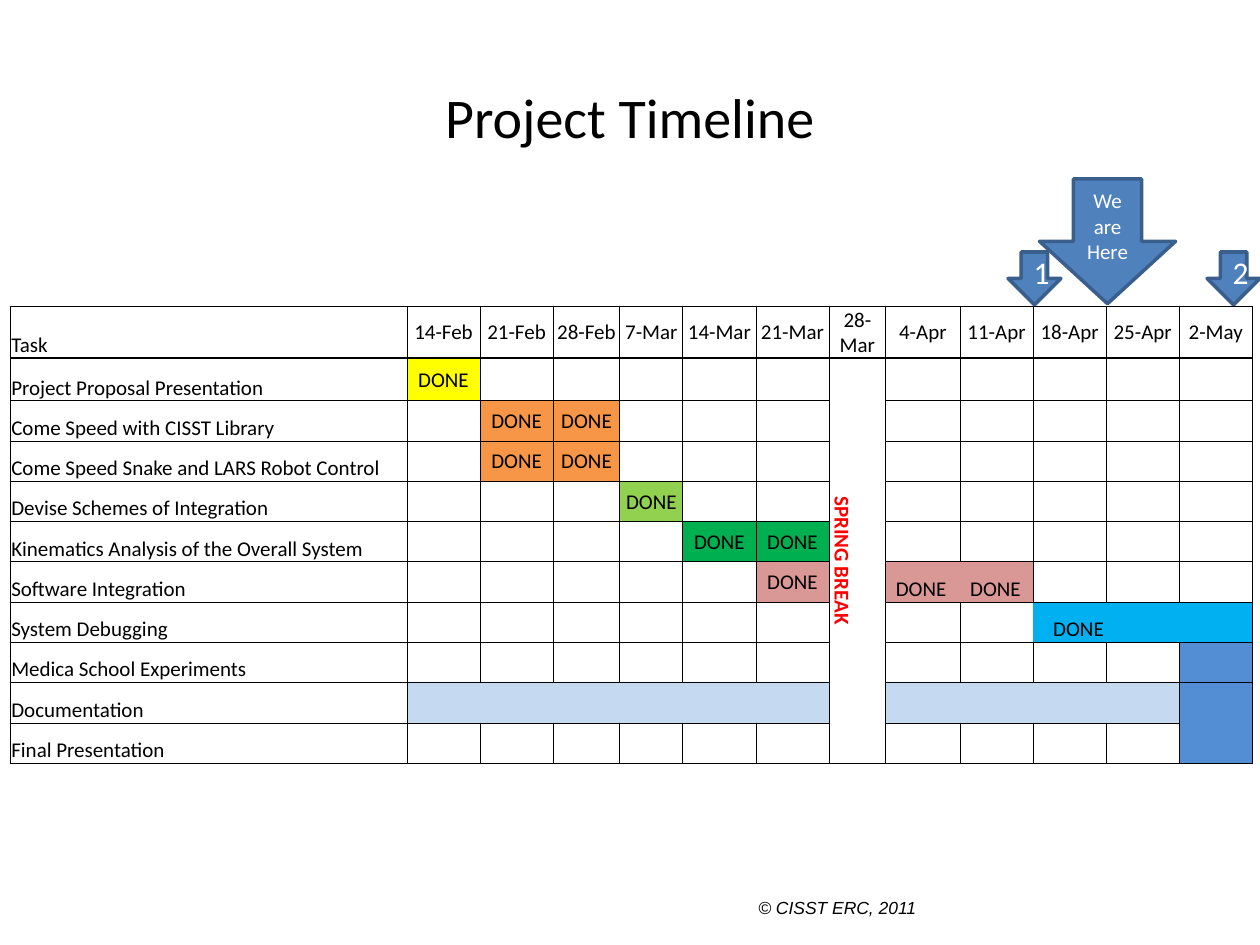
from typing import NamedTuple

from lxml import etree
from pptx import Presentation
from pptx.dml.color import RGBColor
from pptx.enum.shapes import MSO_SHAPE
from pptx.enum.text import MSO_ANCHOR, PP_ALIGN
from pptx.oxml.ns import qn
from pptx.util import Inches, Pt

DOWN_ARROW = MSO_SHAPE.DOWN_ARROW
LEFT, CENTER = PP_ALIGN.LEFT, PP_ALIGN.CENTER
MIDDLE, BOTTOM, TOP = MSO_ANCHOR.MIDDLE, MSO_ANCHOR.BOTTOM, MSO_ANCHOR.TOP

COLORS = {
    "text": "000000", "white": "FFFFFF", "break": "FF0000",
    "arrow": "4F81BD", "arrow_line": "3A5F8C",
    "proposal": "FFFF00", "learning": "F79646", "schemes": "92D050",
    "kinematics": "00B050", "software": "D99795", "debugging": "00B0F0",
    "documentation": "C5D9F1", "final": "538ED5",
}


class Label(NamedTuple):
    text: str
    left: float
    top: float
    width: float
    height: float
    font: str
    size: int
    align: PP_ALIGN
    anchor: MSO_ANCHOR
    italic: bool = False


class Arrow(NamedTuple):
    text: str
    left: float
    top: float
    width: float
    height: float
    size: int


class Bar(NamedTuple):
    """A coloured stretch of the chart, in table rows and columns."""
    row: int
    first: int
    last: int
    color: str
    text: str = ""
    merge_rows: int = 1
    merged: bool = False
    indent: float = 0  # above 0, the text stands bottom left at this inset


LABELS = [
    Label("© CISST ERC, 2011", 5.92, 7.07, 1.5, 0.27, "Arial", 10, LEFT, TOP, True),
    Label("Project Timeline", 0.5, 0.3, 9, 1.25, "Calibri", 32, CENTER, MIDDLE),
]
ARROWS = [
    Arrow("1", 8, 2, 0.42, 0.42, 18),
    Arrow("We are Here", 8.25, 1.42, 1.08, 0.99, 12),
    Arrow("2", 9.58, 2, 0.42, 0.42, 18),
]
WEEKS = ["14-Feb", "21-Feb", "28-Feb", "7-Mar", "14-Mar", "21-Mar",
         "28-Mar", "4-Apr", "11-Apr", "18-Apr", "25-Apr", "2-May"]
TASKS = ["Project Proposal Presentation", "Come Speed with CISST Library",
         "Come Speed Snake and LARS Robot Control",
         "Devise Schemes of Integration",
         "Kinematics Analysis of the Overall System", "Software Integration",
         "System Debugging", "Medica School Experiments", "Documentation",
         "Final Presentation"]
COL_WIDTHS = [3.15, 0.58, 0.58, 0.53, 0.5, 0.58, 0.58, 0.45, 0.59] + [0.58] * 4
ROW_HEIGHTS = [0.41, 0.34] + [0.32] * 9
BREAK_COL = 7
DEBUG_ROW, DEBUG_FIRST = 7, 10
SECOND_DONE = 0.59  # tab stop of the second word in a two-week bar
BARS = [
    Bar(1, 1, 1, "proposal", "DONE"),
    Bar(2, 2, 3, "learning", "DONE"),
    Bar(3, 2, 3, "learning", "DONE"),
    Bar(4, 4, 4, "schemes", "DONE"),
    Bar(5, 5, 6, "kinematics", "DONE"),
    Bar(6, 6, 6, "software", "DONE"),
    Bar(6, 8, 9, "software", "DONE\tDONE", merged=True, indent=0.08),
    Bar(DEBUG_ROW, DEBUG_FIRST, 10, "debugging", "DONE", indent=0.16),
    Bar(DEBUG_ROW, 11, 12, "debugging"),
    Bar(8, 12, 12, "final"),
    Bar(9, 1, 6, "documentation", merged=True),
    Bar(9, 8, 11, "documentation", merged=True),
    Bar(9, 12, 12, "final", merge_rows=2, merged=True),
]


def rgb(name: str) -> RGBColor:
    return RGBColor.from_string(COLORS[name])


def write(tf, text: str, size: int, align=LEFT, color="text", font="Calibri",
          bold=False, italic=False) -> None:
    p = tf.paragraphs[0]
    p.alignment = align
    r = p.add_run()
    r.text = text
    r.font.name, r.font.size = font, Pt(size)
    r.font.bold, r.font.italic = bold, italic
    r.font.color.rgb = rgb(color)


def add_label(s, item: Label) -> None:
    sp = s.shapes.add_textbox(*map(Inches, item[1:5]))
    tf = sp.text_frame
    tf.word_wrap = True
    tf.vertical_anchor = item.anchor
    write(tf, item.text, item.size, item.align, font=item.font, italic=item.italic)


def add_arrow(s, item: Arrow) -> None:
    sp = s.shapes.add_shape(DOWN_ARROW, *map(Inches, item[1:5]))
    sp.shadow.inherit = False
    sp.fill.solid()
    sp.fill.fore_color.rgb = rgb("arrow")
    sp.line.color.rgb = rgb("arrow_line")
    sp.line.width = Pt(2)
    sp.text_frame.vertical_anchor = MIDDLE
    write(sp.text_frame, item.text, item.size, CENTER, "white")


def set_borders(cell, row: int, col: int) -> None:
    """Thin grid, thick rule under the header, no uprights in the debug bar."""
    debug = row == DEBUG_ROW
    widths = {
        "L": 0 if debug and col >= DEBUG_FIRST else 0.5,
        "R": 0 if debug and DEBUG_FIRST - 1 <= col < len(WEEKS) else 0.5,
        "T": 1.5 if row == 1 else 0.5,
        "B": 1.5 if row == 0 else 0.5,
    }
    tc_pr = cell._tc.get_or_add_tcPr()
    for side, width in widths.items():
        ln = etree.SubElement(tc_pr, qn(f"a:ln{side}"), w=str(int(Pt(width))))
        if width:
            fill = etree.SubElement(ln, qn("a:solidFill"))
            etree.SubElement(fill, qn("a:srgbClr"), val=COLORS["text"])
        else:
            etree.SubElement(ln, qn("a:noFill"))


def add_grid(s):
    frame = s.shapes.add_table(len(ROW_HEIGHTS), len(COL_WIDTHS), Inches(0.08),
                               Inches(2.43), Inches(sum(COL_WIDTHS)),
                               Inches(sum(ROW_HEIGHTS)))
    table = frame.table
    table.first_row = table.horz_banding = False
    for column, width in zip(table.columns, COL_WIDTHS):
        column.width = Inches(width)
    for i, height in enumerate(ROW_HEIGHTS):
        table.rows[i].height = Inches(height)
        for j in range(len(COL_WIDTHS)):
            cell = table.cell(i, j)
            cell.margin_left = cell.margin_right = cell.margin_top = Inches(0.01)
            cell.margin_bottom = 0
            cell.vertical_anchor = MIDDLE if j else BOTTOM
            set_borders(cell, i, j)
            cell.fill.background()
    return table


def add_bar(table, bar: Bar) -> None:
    for col in range(bar.first, bar.last + 1):
        cell = table.cell(bar.row, col)
        cell.fill.solid()
        cell.fill.fore_color.rgb = rgb(bar.color)
        if not bar.text or (bar.merged and col > bar.first):
            continue
        if bar.indent:
            cell.margin_left = Inches(bar.indent)
            cell.vertical_anchor = BOTTOM
        if "\t" in bar.text:
            p_pr = cell.text_frame.paragraphs[0]._p.get_or_add_pPr()
            tabs = etree.SubElement(p_pr, qn("a:tabLst"))
            etree.SubElement(tabs, qn("a:tab"), pos=str(int(Inches(SECOND_DONE))),
                             algn="l")
        write(cell.text_frame, bar.text, 12, LEFT if bar.indent else CENTER)
    if bar.merged:
        end = table.cell(bar.row + bar.merge_rows - 1, bar.last)
        table.cell(bar.row, bar.first).merge(end)


def main() -> None:
    prs = Presentation()
    prs.slide_width, prs.slide_height = Inches(10), Inches(7.5)
    s = prs.slides.add_slide(prs.slide_layouts[6])
    for label in LABELS:
        add_label(s, label)
    for arrow in ARROWS:
        add_arrow(s, arrow)

    # Timeline: headings, spring break, then the coloured bars
    table = add_grid(s)
    for j, week in enumerate(WEEKS, 1):
        write(table.cell(0, j).text_frame, week, 12, CENTER)
    for i, task in enumerate(["Task"] + TASKS):
        write(table.cell(i, 0).text_frame, task, 12)
    cell = table.cell(1, BREAK_COL)
    cell.merge(table.cell(len(TASKS), BREAK_COL))
    cell._tc.get_or_add_tcPr().set("vert", "vert")
    write(cell.text_frame, "SPRING BREAK", 12, CENTER, "break", bold=True)
    for bar in BARS:
        add_bar(table, bar)
    prs.save("out.pptx")


if __name__ == "__main__":
    main()
